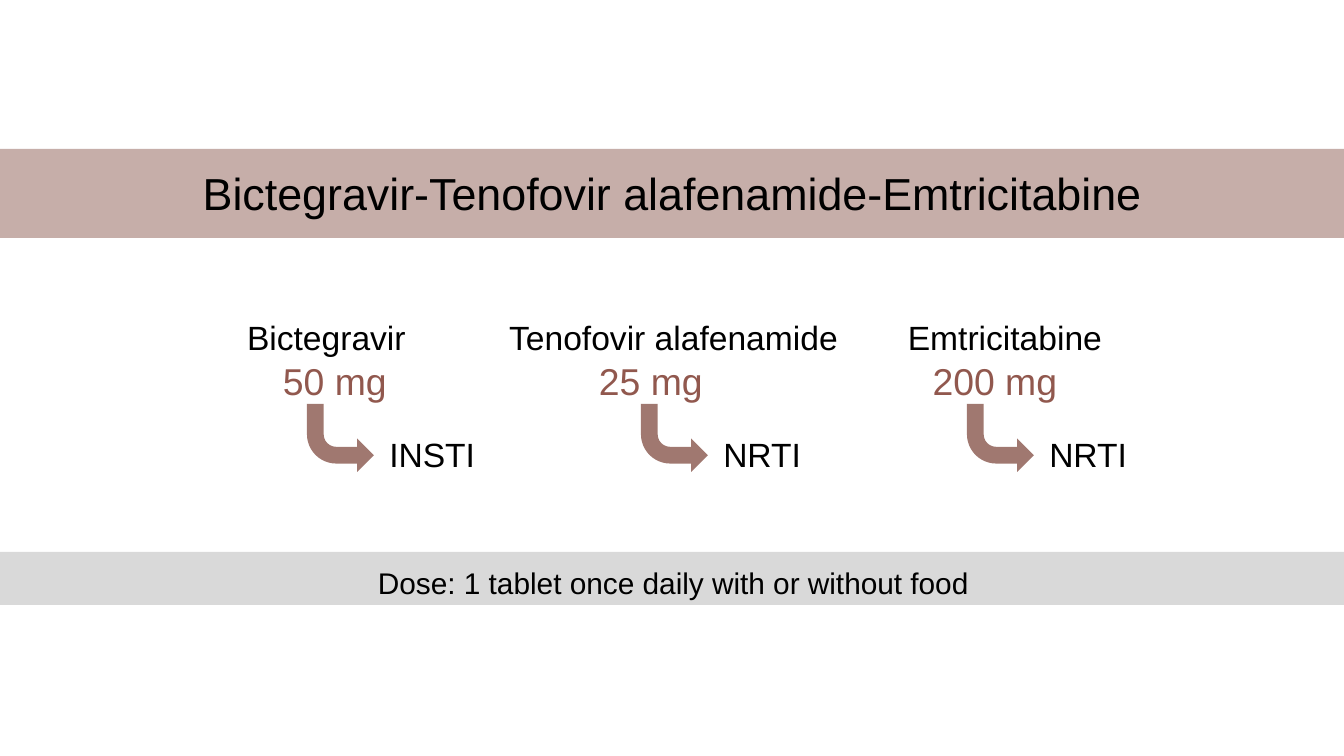
from dataclasses import dataclass

from lxml import etree
from pptx import Presentation
from pptx.dml.color import RGBColor
from pptx.enum.shapes import MSO_SHAPE
from pptx.enum.text import MSO_ANCHOR, MSO_AUTO_SIZE, PP_ALIGN
from pptx.oxml.ns import qn
from pptx.util import Emu, Pt

PX = 914400 / 134.4
PAGE_WIDTH, PAGE_HEIGHT = 1344, 756
BENT_ARROW, RECTANGLE = MSO_SHAPE.BENT_ARROW, MSO_SHAPE.RECTANGLE
ROUNDED = MSO_SHAPE.ROUNDED_RECTANGLE
MIDDLE, NO_FIT = MSO_ANCHOR.MIDDLE, MSO_AUTO_SIZE.NONE
LEFT, CENTER = PP_ALIGN.LEFT, PP_ALIGN.CENTER


@dataclass(frozen=True)
class Theme:
    font: str = "Arial"
    ink: str = "000000"
    accent: str = "A07870"
    dose_ink: str = "91584E"
    footer: str = "D9D9D9"
    title_size: int = 24
    dose_size: int = 20
    label_size: int = 18
    footer_size: int = 16
    title_opacity: int = 60


THEME = Theme()

# name, strength, drug class, box left and width, offsets of strength and arrow
DRUGS = [
    ("Bictegravir", "50 mg", "INSTI", 174, 305, 71, 133),
    ("Tenofovir alafenamide", "25 mg", "NRTI", 474, 399, 87, 167),
    ("Emtricitabine", "200 mg", "NRTI", 878, 254, 27, 89),
]


def emu(*lengths):
    return [Emu(round(length * PX)) for length in lengths]


def set_all(target, values):
    for name, value in values.items():
        setattr(target, name, value)


def write(shape, text, size, color=THEME.ink, align=CENTER, leading=None):
    frame = shape.text_frame
    set_all(frame, {"word_wrap": True, "auto_size": NO_FIT, "vertical_anchor": MIDDLE})
    para = frame.paragraphs[0]
    set_all(para, {
        "alignment": align,
        "line_spacing": Pt(leading) if leading else 1.0,
        "space_before": Pt(0),
    })
    span = para.add_run()
    span.text = text
    set_all(span.font, {"name": THEME.font, "size": Pt(size), "bold": False})
    span.font.color.rgb = RGBColor.from_string(color)


def paint(shape, color=None):
    """Fill the shape, or clear it when no colour is given; never outline it."""
    if color:
        shape.fill.solid()
        shape.fill.fore_color.rgb = RGBColor.from_string(color)
    else:
        shape.fill.background()
    shape.line.fill.background()


def add_shape(page, kind, box, color=None):
    shape = page.shapes.add_shape(kind, *emu(*box))
    shape.shadow.inherit = False
    paint(shape, color)
    return shape


def place_title(page, box, text):
    title = page.shapes.title
    set_all(title, dict(zip(("left", "top", "width", "height"), emu(*box))))
    paint(title, THEME.accent)
    color = title.fill._xPr.find(qn("a:solidFill"))[0]
    etree.SubElement(color, qn("a:alpha"), val=str(THEME.title_opacity * 1000))
    write(title, text, THEME.title_size, leading=28)


def add_drug(page, box, name, strength, drug_class, strength_offset, arrow_offset):
    """Name over strength, with an arrow turning down to the drug class."""
    left, top, width, _ = box
    arrow_left, arrow_width = left + arrow_offset, 67
    arrow = add_shape(page, BENT_ARROW, (arrow_left, top + 99, arrow_width, 68),
                      THEME.accent)
    arrow._element.spPr.xfrm.set("flipV", "1")
    class_box = add_shape(page, ROUNDED,
                          (arrow_left + arrow_width, top + 127, 180, 44))
    write(class_box, drug_class, THEME.label_size, align=LEFT)
    strength_box = add_shape(page, ROUNDED,
                             (left + strength_offset, top + 46, 180, 59))
    write(strength_box, strength, THEME.dose_size, color=THEME.dose_ink)
    name_box = page.shapes.add_textbox(*emu(left, top, width, 67))
    write(name_box, name, THEME.label_size, leading=20)


def add_footer(page, box, text):
    band = add_shape(page, RECTANGLE, box, THEME.footer)
    write(band, text, THEME.footer_size, leading=24)


def main():
    deck = Presentation()
    deck.slide_width, deck.slide_height = emu(PAGE_WIDTH, PAGE_HEIGHT)
    page = deck.slides.add_slide(deck.slide_layouts[5])
    place_title(page, (-7, 149, 1358, 89),
                "Bictegravir-Tenofovir alafenamide-Emtricitabine")
    for name, strength, drug_class, left, width, *offsets in DRUGS:
        add_drug(page, (left, 305, width, 171), name, strength, drug_class, *offsets)
    add_footer(page, (0, 552, 1347, 53),
               "Dose: 1 tablet once daily with or without food")
    deck.save("out.pptx")


if __name__ == "__main__":
    main()
